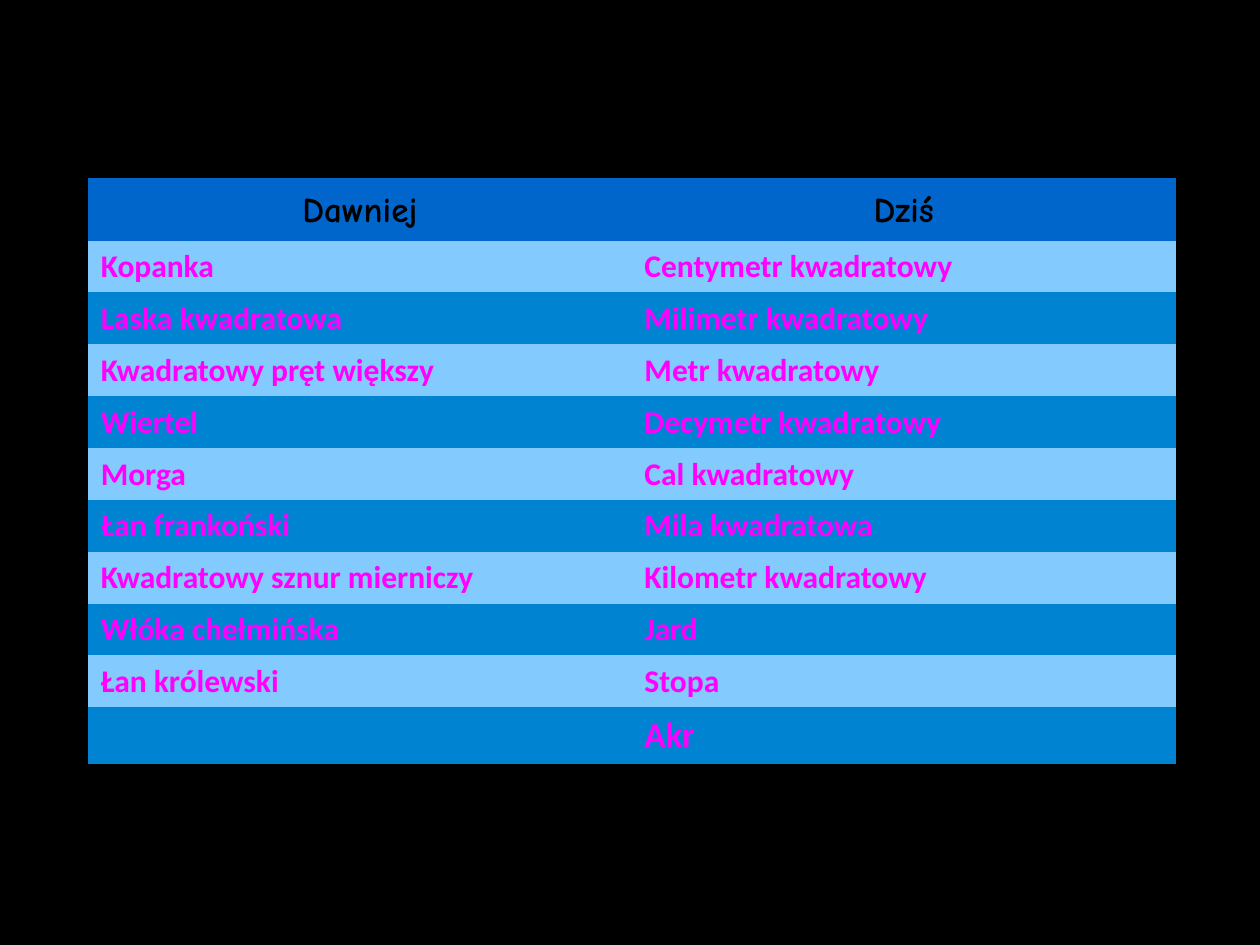
from dataclasses import dataclass

from lxml import etree
from pptx import Presentation
from pptx import util as u
from pptx.dml.color import RGBColor
from pptx.enum import text
from pptx.oxml.ns import qn

WIDE, HIGH = 10, 7.5
LEFT, TOP, SPAN = 0.7, 1.41, 8.63
HAIR = u.Pt(0.03)
HUES = {
    "back": "000000",
    "head": "0066CC",
    "light": "83CAFF",
    "dark": "0084D1",
    "ink": "000000",
    "pink": "FF00FF",
    "edge": "FFFFFF",
}
UNITS = [
    ("Dawniej", "Dziś"),
    ("Kopanka", "Centymetr kwadratowy"),
    ("Laska kwadratowa", "Milimetr kwadratowy"),
    ("Kwadratowy pręt większy", "Metr kwadratowy"),
    ("Wiertel", "Decymetr kwadratowy"),
    ("Morga", "Cal kwadratowy"),
    ("Łan frankoński", "Mila kwadratowa"),
    ("Kwadratowy sznur mierniczy", "Kilometr kwadratowy"),
    ("Włóka chełmińska", "Jard"),
    ("Łan królewski", "Stopa"),
    ("", "Akr"),
]


@dataclass(frozen=True)
class Look:
    fill: str
    ink: str = "pink"
    font: str = "Calibri"
    size: int = 18
    high: float = 0.41
    line: float = 1.02
    align: text.PP_ALIGN = text.PP_ALIGN.LEFT


HEAD = Look("head", "ink", "Comic Neue", 20, 0.5, 1.17, text.PP_ALIGN.CENTER)
LIGHT, DARK = Look("light"), Look("dark")
LAST = Look("dark", size=20, high=0.45)
LOOKS = [HEAD] + [LIGHT if row % 2 else DARK for row in range(1, len(UNITS) - 1)] + [LAST]


def hue(name: str) -> RGBColor:
    return RGBColor.from_string(HUES[name])


def edge(cell) -> None:
    """Give the cell hairline borders; they must come before its fill."""
    props = cell._tc.get_or_add_tcPr()
    for side in ("lnL", "lnR", "lnT", "lnB"):
        line = etree.SubElement(props, qn(f"a:{side}"), w=str(int(HAIR)))
        fill = etree.SubElement(line, qn("a:solidFill"))
        etree.SubElement(fill, qn("a:srgbClr"), val=HUES["edge"])


def write(cell, words: str, look: Look) -> None:
    edge(cell)
    cell.fill.solid()
    cell.fill.fore_color.rgb = hue(look.fill)
    if not words:
        return
    para = cell.text_frame.paragraphs[0]
    para.text = words
    para.alignment = look.align
    para.line_spacing = look.line
    para.space_after = u.Pt(14.1)
    font = para.runs[0].font
    font.name, font.size, font.bold = look.font, u.Pt(look.size), True
    font.color.rgb = hue(look.ink)


def main() -> None:
    deck = Presentation()
    deck.slide_width, deck.slide_height = u.Inches(WIDE), u.Inches(HIGH)
    slide = deck.slides.add_slide(deck.slide_layouts[6])
    slide.background.fill.solid()
    slide.background.fill.fore_color.rgb = hue("back")

    tall = sum(look.high for look in LOOKS)
    box = [u.Inches(n) for n in (LEFT, TOP, SPAN, tall)]
    table = slide.shapes.add_table(len(UNITS), len(UNITS[0]), *box).table
    table.first_row = table.horz_banding = False
    for row, look, pair in zip(table.rows, LOOKS, UNITS):
        row.height = u.Inches(look.high)
        for cell, words in zip(row.cells, pair):
            write(cell, words, look)
    deck.save("out.pptx")


if __name__ == "__main__":
    main()
